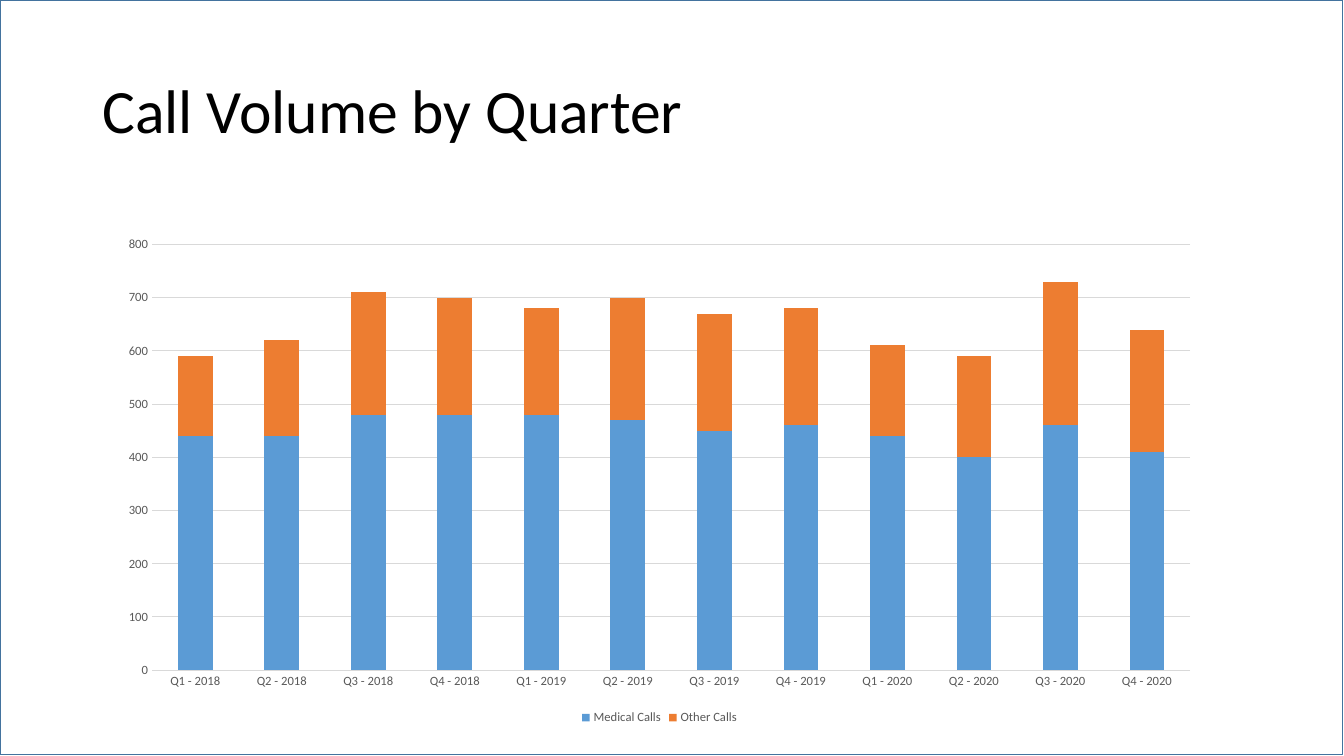
from lxml import etree
from pptx import Presentation
from pptx.chart.data import CategoryChartData
from pptx.dml.color import RGBColor
from pptx.enum.chart import XL_CHART_TYPE, XL_LEGEND_POSITION, XL_TICK_MARK
from pptx.enum.shapes import MSO_SHAPE
from pptx.enum.text import MSO_ANCHOR
from pptx.oxml.ns import qn
from pptx.util import Cm, Pt

STACKED = XL_CHART_TYPE.COLUMN_STACKED
BOTTOM = XL_LEGEND_POSITION.BOTTOM
NO_TICK = XL_TICK_MARK.NONE
RECT = MSO_SHAPE.RECTANGLE
MIDDLE = MSO_ANCHOR.MIDDLE

WHITE = RGBColor(0xFF, 0xFF, 0xFF)
BLACK = RGBColor(0x00, 0x00, 0x00)
GREY = RGBColor(0x59, 0x59, 0x59)
PALE = RGBColor(0xD9, 0xD9, 0xD9)
NAVY = RGBColor(0x43, 0x73, 0x9E)
BLUE = RGBColor(0x5B, 0x9B, 0xD5)
ORANGE = RGBColor(0xED, 0x7D, 0x31)

QUARTERS = [f"Q{q} - {year}" for year in (2018, 2019, 2020) for q in range(1, 5)]
CALLS = {
    "Medical Calls": (BLUE, [440, 440, 480, 480, 480, 470, 450, 460, 440, 400, 460, 410]),
    "Other Calls": (ORANGE, [150, 180, 230, 220, 200, 230, 220, 220, 170, 190, 270, 230]),
}


def apply(target, values):
    for name, value in values.items():
        setattr(target, name, value)


class Deck:
    """Holds the style and the current slide, and draws each kind of element."""

    def __init__(self, font, width, height):
        self.font = font
        self.deck = Presentation()
        apply(self.deck, {"slide_width": Cm(width), "slide_height": Cm(height)})
        self.slide = self.deck.slides.add_slide(self.deck.slide_layouts[6])

    def style(self, font, size, color):
        apply(font, {"name": self.font, "size": Pt(size)})
        font.color.rgb = color

    def stroke(self, line, color, width):
        line.color.rgb = color
        line.width = Pt(width)

    def frame(self, box, fill, alpha, edge):
        shape = self.slide.shapes.add_shape(RECT, *map(Cm, box))
        shape.shadow.inherit = False
        shape.fill.solid()
        shape.fill.fore_color.rgb = fill
        tint = shape.fill._xPr.find(".//" + qn("a:srgbClr"))
        etree.SubElement(tint, qn("a:alpha"), val=str(alpha * 1000))
        self.stroke(shape.line, edge, 1)

    def title(self, box, text):
        frame = self.slide.shapes.add_textbox(*map(Cm, box)).text_frame
        apply(frame, {"word_wrap": True, "vertical_anchor": MIDDLE})
        para = frame.paragraphs[0]
        apply(para, {"text": text, "line_spacing": 0.9})
        self.style(para.runs[0].font, 44, BLACK)

    def chart(self, box, cats, data):
        source = CategoryChartData()
        source.categories = cats
        for name, (_, vals) in data.items():
            source.add_series(name, vals)
        chart = self.slide.shapes.add_chart(STACKED, *map(Cm, box), source).chart
        self.style(chart.font, 10, BLACK)
        apply(chart, {"has_title": False, "has_legend": True})
        apply(chart.legend, {"position": BOTTOM, "include_in_layout": False})
        self.style(chart.legend.font, 9, GREY)
        plot = chart.plots[0]
        apply(plot, {"gap_width": 150, "overlap": 100, "vary_by_categories": False})
        for series, (color, _) in zip(plot.series, data.values()):
            series.format.fill.solid()
            series.format.fill.fore_color.rgb = color
        self.axes(chart.category_axis, chart.value_axis)

    def axes(self, cat, val):
        for axis in (cat, val):
            apply(axis, {"major_tick_mark": NO_TICK, "minor_tick_mark": NO_TICK})
            self.style(axis.tick_labels.font, 9, GREY)
        self.stroke(cat.format.line, PALE, 0.75)
        apply(val, {"minimum_scale": 0, "maximum_scale": 800, "major_unit": 100})
        val.format.line.fill.background()
        self.stroke(val.major_gridlines.format.line, PALE, 0.75)


def main():
    deck = Deck("Calibri", 33.87, 19.05)
    deck.frame((0, 0, 33.83, 19.02), WHITE, 78, NAVY)
    deck.title((2.33, 1.02, 29.21, 3.68), "Call Volume by Quarter")
    deck.chart((2.69, 5.72, 27.86, 12.65), QUARTERS, CALLS)
    deck.deck.save("out.pptx")


if __name__ == "__main__":
    main()
